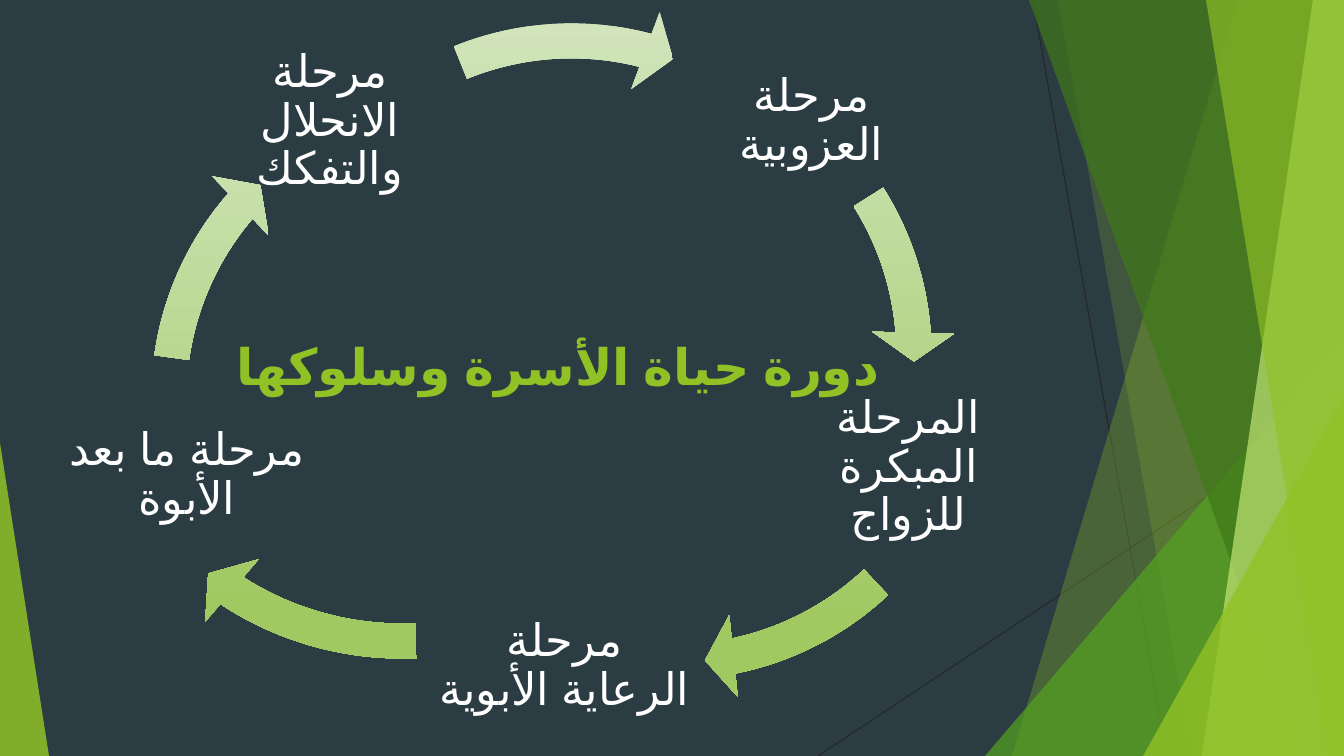
from dataclasses import dataclass

from lxml import etree
from pptx import Presentation
from pptx import util as u
from pptx.dml.color import RGBColor
from pptx.enum import lang, shapes, text
from pptx.oxml.ns import qn

PX = 914400 / 100.8  # EMU per pixel
WIDTH, HEIGHT = 1344, 756


@dataclass(frozen=True)
class Theme:
    background: str = "2C3C43"
    lime: str = "90C226"
    green: str = "54A021"
    forest: str = "3F7819"
    pale: str = "C0E474"
    hairline: str = "262626"
    white: str = "FFFFFF"
    arrow_top: str = "D3E5BE"
    arrow_bottom: str = "A0C962"
    font: str = "Arial"
    title_size: int = 36
    stage_size: int = 32


THEME = Theme()

# Facets of the backdrop: top-left x, bottom-left x, colour, opacity %
BACK_FACETS = [(1238, 1012, THEME.lime, 30), (1058, 1192, THEME.lime, 20)]
FRONT_FACETS = [
    (1029, 1301, THEME.forest, 70),
    (1313, 1202, THEME.pale, 70),
    (1206, 1329, THEME.lime, 65),
]

# Stages of the cycle: label, its left, top, width
STAGES = [
    ("مرحلة العزوبية", 680, 32, 263),
    ("المرحلة المبكرة للزواج", 780, 378, 257),
    ("مرحلة الرعاية الأبوية", 433, 577, 263),
    ("مرحلة ما بعد الأبوة", 62, 386, 250),
    ("مرحلة الانحلال والتفكك", 194, 32, 272),
]
STAGE_HEIGHT = 179

# Arrow leaving each stage: left, top, width, end angle, start angle
ARROWS = [
    (284, 19, 671, 355.77, 327.70),
    (339, 32, 671, 78.44, 46.83),
    (57, 11, 690, 124.88, 87.26),
    (128, 63, 671, 220.81, 187.98),
    (236, 0, 671, 284.57, 247.87),
]
ARROW_HEIGHT = 671


def emu(*lengths):
    return [u.Emu(round(length * PX)) for length in lengths]


def rgb(colour):
    return RGBColor.from_string(colour)


def paint(shape, colour, opacity):
    shape.shadow.inherit = False
    shape.line.fill.background()
    shape.fill.solid()
    shape.fill.fore_color.rgb = rgb(colour)
    tone = shape.fill._xPr.find(qn("a:solidFill"))[0]
    etree.SubElement(tone, qn("a:alpha"), val=str(opacity * 1000))


def add_hairline(page, *ends):
    line = page.shapes.add_connector(shapes.MSO_CONNECTOR.STRAIGHT, *emu(*ends))
    line.line.color.rgb = rgb(THEME.hairline)
    line.line.width = u.Pt(0.75)
    etree.SubElement(line._element.spPr, qn("a:effectLst"))


def add_facet(page, top_x, bottom_x, colour, opacity):
    builder = page.shapes.build_freeform(top_x, 0, scale=PX)
    builder.add_line_segments([(WIDTH, 0), (WIDTH, HEIGHT), (bottom_x, HEIGHT)])
    paint(builder.convert_to_shape(), colour, opacity)


def add_triangle(page, left, top, width, apex, colour, opacity):
    """Triangle standing on the bottom edge of the slide."""
    triangle = page.shapes.add_shape(
        shapes.MSO_SHAPE.ISOSCELES_TRIANGLE, *emu(left, top, width, HEIGHT - top))
    triangle.adjustments[0] = apex
    paint(triangle, colour, opacity)


def write(frame, words, *, size, colour, bold=False, spacing=None):
    """Centred right-to-left paragraph."""
    frame.word_wrap = True
    frame.auto_size = text.MSO_AUTO_SIZE.NONE
    para = frame.paragraphs[0]
    para.alignment = text.PP_ALIGN.CENTER
    para._p.get_or_add_pPr().set("rtl", "1")
    if spacing:
        para.line_spacing = spacing
    span = para.add_run()
    span.text = words
    span.font.size = u.Pt(size)
    span.font.bold = bold
    span.font.color.rgb = rgb(colour)
    span.font.name = THEME.font
    span.font.language_id = lang.MSO_LANGUAGE_ID.ARABIC
    etree.SubElement(span._r.get_or_add_rPr(), qn("a:cs"), typeface=THEME.font)


def set_title(page, words, *place):
    title = page.shapes.title
    title.left, title.top, title.width, title.height = emu(*place)
    title.text_frame.vertical_anchor = text.MSO_ANCHOR.TOP
    write(title.text_frame, words, size=THEME.title_size, colour=THEME.lime, bold=True)


def add_stage(page, words, left, top, width):
    box = page.shapes.add_textbox(*emu(left, top, width, STAGE_HEIGHT))
    frame = box.text_frame
    frame.vertical_anchor = text.MSO_ANCHOR.MIDDLE
    frame.margin_left = frame.margin_right = u.Inches(0.04)
    frame.margin_top = frame.margin_bottom = u.Inches(0.04)
    write(frame, words, size=THEME.stage_size, colour=THEME.white, spacing=0.9)


def add_cycle_arrow(page, left, top, width, end, start):
    arrow = page.shapes.add_shape(
        shapes.MSO_SHAPE.CIRCULAR_ARROW, *emu(left, top, width, ARROW_HEIGHT))
    # Angles are stored in 60000ths of a degree, adjustments in 100000ths
    values = (0.052, 5.6 * 0.6, end * 0.6, start * 0.6, 0.061)
    for index, value in enumerate(values):
        arrow.adjustments[index] = value
    arrow.shadow.inherit = False
    arrow.line.fill.background()
    arrow.fill.gradient()
    arrow.fill.gradient_angle = 270
    first, last = arrow.fill.gradient_stops
    first.color.rgb, first.position = rgb(THEME.arrow_top), 0
    last.color.rgb, last.position = rgb(THEME.arrow_bottom), 0.88


def add_backdrop(page):
    page.background.fill.solid()
    page.background.fill.fore_color.rgb = rgb(THEME.background)
    add_hairline(page, 1033, 0, 1167, HEIGHT)
    add_hairline(page, WIDTH, 406, 818, HEIGHT)
    for facet in BACK_FACETS:
        add_facet(page, *facet)
    add_triangle(page, 985, 336, 359, 1, THEME.green, 72)
    for facet in FRONT_FACETS:
        add_facet(page, *facet)
    add_triangle(page, 1143, 396, 201, 1, THEME.lime, 80)
    add_triangle(page, 0, 443, 49, 0, THEME.lime, 85)


def main():
    deck = Presentation()
    deck.slide_width, deck.slide_height = emu(WIDTH, HEIGHT)
    page = deck.slides.add_slide(deck.slide_layouts.get_by_name("Title Only"))
    add_backdrop(page)
    set_title(page, "دورة حياة الأسرة وسلوكها", 84, 330, 948, 145)
    # Cycle of stages, each followed by its arrow
    for stage, arrow in zip(STAGES, ARROWS):
        add_stage(page, *stage)
        add_cycle_arrow(page, *arrow)
    deck.save("out.pptx")


if __name__ == "__main__":
    main()
